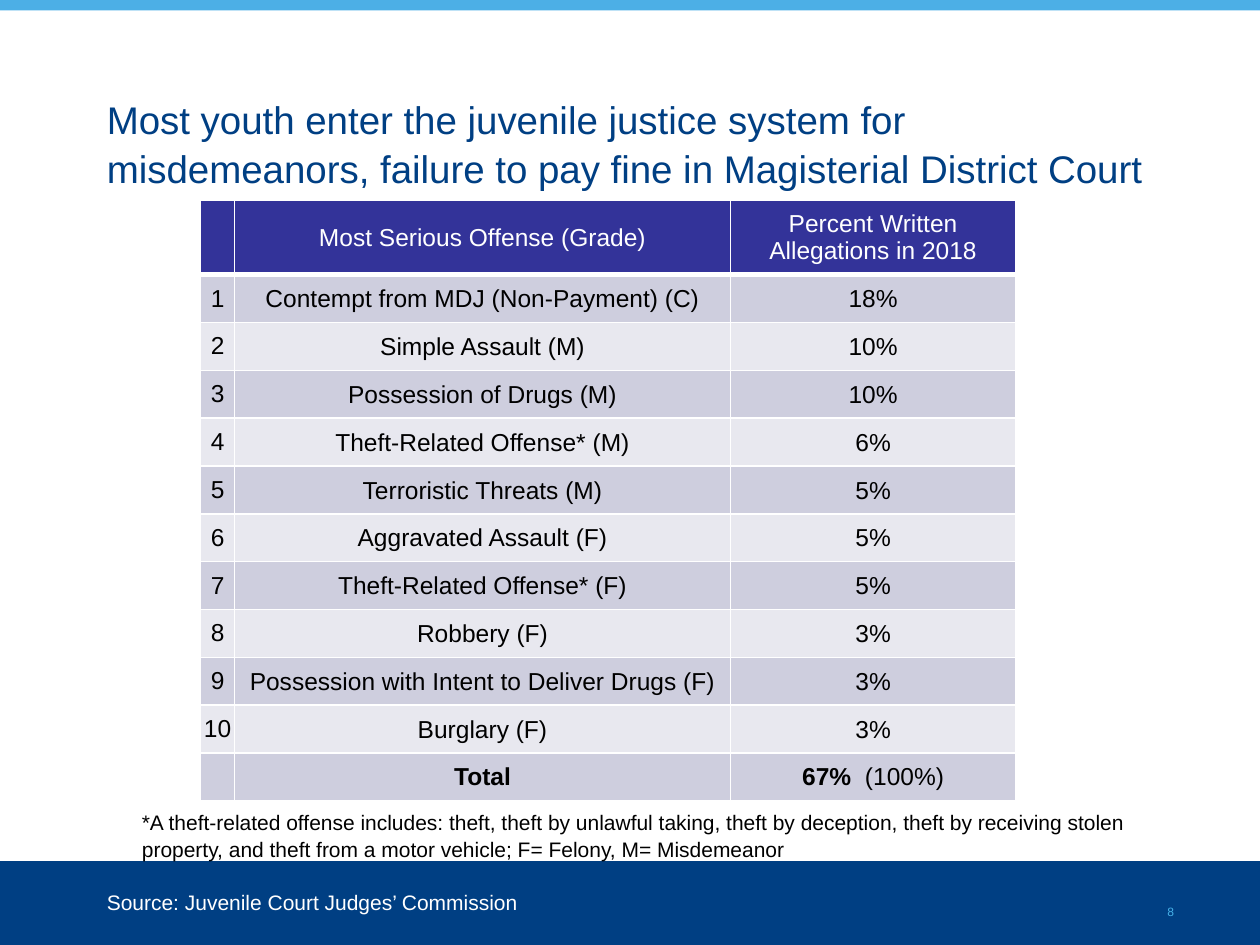
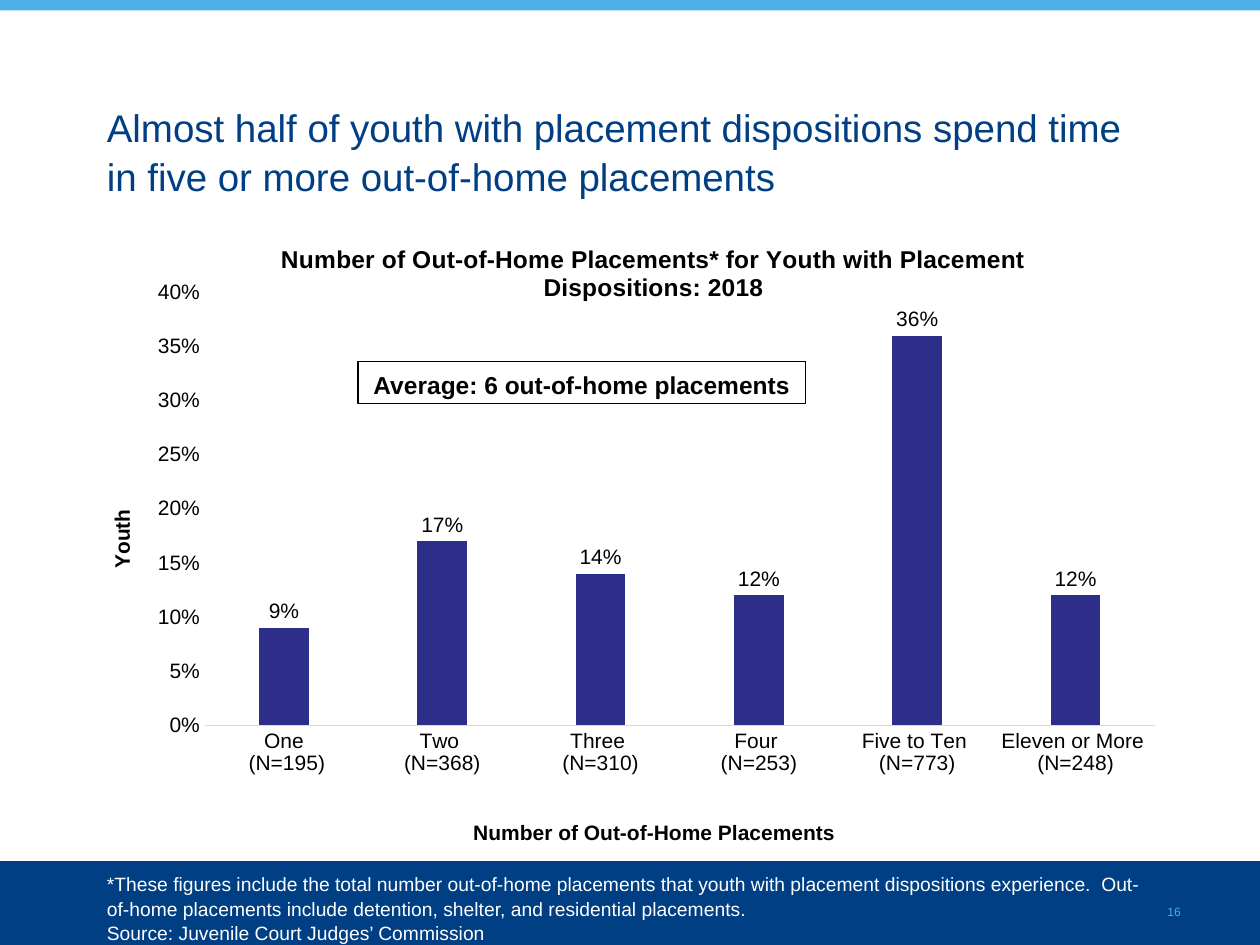
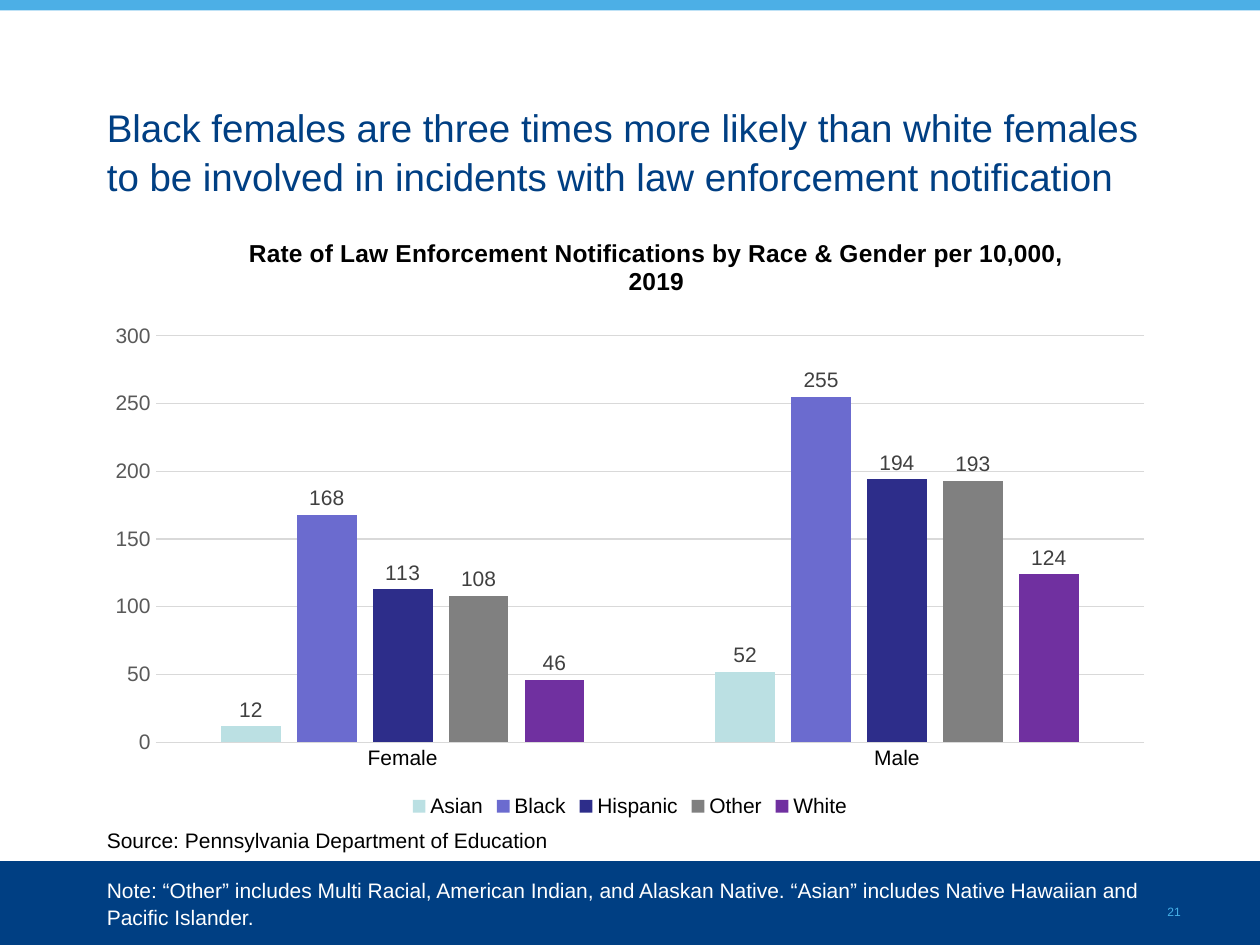
from lxml import etree
from pptx import Presentation
from pptx.chart.data import CategoryChartData
from pptx.dml.color import RGBColor
from pptx.enum.chart import XL_CHART_TYPE, XL_LABEL_POSITION, XL_LEGEND_POSITION, XL_TICK_MARK
from pptx.enum.shapes import MSO_SHAPE
from pptx.enum.text import MSO_ANCHOR, PP_ALIGN
from pptx.oxml.ns import qn
from pptx.util import Pt

COLUMN = XL_CHART_TYPE.COLUMN_CLUSTERED
LABEL_ABOVE = XL_LABEL_POSITION.OUTSIDE_END
LEGEND_BOTTOM = XL_LEGEND_POSITION.BOTTOM
NO_TICK = XL_TICK_MARK.NONE
RECTANGLE = MSO_SHAPE.RECTANGLE
TOP, MIDDLE = MSO_ANCHOR.TOP, MSO_ANCHOR.MIDDLE
LEFT, CENTER = PP_ALIGN.LEFT, PP_ALIGN.CENTER

NAVY = RGBColor(0x00, 0x3F, 0x83)
SKY = RGBColor(0x4C, 0xAF, 0xE6)
NUMBER_BLUE = RGBColor(0x46, 0xB0, 0xE7)
WHITE = RGBColor(0xFF, 0xFF, 0xFF)
BLACK = RGBColor(0x00, 0x00, 0x00)
HEADER_BLUE = RGBColor(0x33, 0x33, 0x99)
ROW_DARK = RGBColor(0xCE, 0xCE, 0xDE)
ROW_LIGHT = RGBColor(0xE8, 0xE8, 0xEF)
RULE_GREY = RGBColor(0xD9, 0xD9, 0xD9)
AXIS_GREY = RGBColor(0x59, 0x59, 0x59)
LABEL_GREY = RGBColor(0x40, 0x40, 0x40)
INDIGO = RGBColor(0x2D, 0x2D, 0x8A)
AQUA = RGBColor(0xBB, 0xE0, 0xE3)
PERIWINKLE = RGBColor(0x6B, 0x6B, 0xCF)
GREY = RGBColor(0x80, 0x80, 0x80)
PURPLE = RGBColor(0x70, 0x30, 0xA0)

FONT = "Arial"
SLIDE_WIDTH, SLIDE_HEIGHT = 720, 540
MARGIN = 54
CONTENT_WIDTH = SLIDE_WIDTH - 2 * MARGIN
FOOTER_TOP = 492

OFFENSES = [
    ("Contempt from MDJ (Non-Payment) (C)", "18%"),
    ("Simple Assault (M)", "10%"),
    ("Possession of Drugs (M)", "10%"),
    ("Theft-Related Offense* (M)", "6%"),
    ("Terroristic Threats (M)", "5%"),
    ("Aggravated Assault (F)", "5%"),
    ("Theft-Related Offense* (F)", "5%"),
    ("Robbery (F)", "3%"),
    ("Possession with Intent to Deliver Drugs (F)", "3%"),
    ("Burglary (F)", "3%"),
]
PLACEMENTS = {
    "One\n (N=195)": 0.09,
    "Two \n(N=368)": 0.17,
    "Three \n(N=310)": 0.14,
    "Four \n(N=253)": 0.12,
    "Five to Ten \n(N=773)": 0.36,
    "Eleven or More \n(N=248)": 0.12,
}
NOTIFICATION_RATES = [
    ("Asian", (12, 52), AQUA),
    ("Black", (168, 255), PERIWINKLE),
    ("Hispanic", (113, 194), INDIGO),
    ("Other", (108, 193), GREY),
    ("White", (46, 124), PURPLE),
]


def points(*lengths):
    return [Pt(length) for length in lengths]


def set_font(font, size, color=BLACK, bold=False):
    font.name, font.size, font.bold = FONT, Pt(size), bold
    font.color.rgb = color


def add_run(paragraph, text, size=12, color=BLACK, bold=False):
    run = paragraph.add_run()
    run.text = text
    set_font(run.font, size, color, bold)
    return run


def write_text(frame, text, align=LEFT, line_spacing=1.07, **font):
    """Fill a text frame, one paragraph for each line of text."""
    for index, line in enumerate(text.split("\n")):
        paragraph = frame.add_paragraph() if index else frame.paragraphs[0]
        paragraph.alignment, paragraph.line_spacing = align, line_spacing
        add_run(paragraph, line, **font)


def add_text(slide, box, text, anchor=TOP, wrap=True, **text_format):
    shape = slide.shapes.add_textbox(*points(*box))
    shape.text_frame.word_wrap = wrap
    shape.text_frame.vertical_anchor = anchor
    write_text(shape.text_frame, text, **text_format)
    return shape


def add_rectangle(slide, box, fill=None, line=None):
    shape = slide.shapes.add_shape(RECTANGLE, *points(*box))
    shape.shadow.inherit = False
    if fill is None:
        shape.fill.background()
    else:
        shape.fill.solid()
        shape.fill.fore_color.rgb = fill
    if line is None:
        shape.line.fill.background()
    else:
        shape.line.color.rgb = line
        shape.line.width = Pt(0.75)
    return shape


def add_base_slide(presentation, title, number, title_box=(MARGIN, 54, CONTENT_WIDTH, 42), anchor=TOP):
    slide = presentation.slides.add_slide(presentation.slide_layouts[6])
    add_rectangle(slide, (0, FOOTER_TOP, SLIDE_WIDTH, SLIDE_HEIGHT - FOOTER_TOP), NAVY)
    add_rectangle(slide, (0, 0, SLIDE_WIDTH, 6), SKY)
    number_box = add_text(slide, (660, 504, 24.5, 16.5), str(number), wrap=False, color=NUMBER_BLUE)
    number_run = number_box.text_frame.paragraphs[0].runs[0]
    number_run.font._element.set("baseline", "-25000")
    add_text(slide, title_box, title, anchor=anchor, size=22, color=NAVY)
    return slide


def set_borders(cell, bottom=1):
    properties = cell._tc.get_or_add_tcPr()
    for side, width in (("L", 1), ("R", 1), ("T", 1), ("B", bottom)):
        line = etree.SubElement(properties, qn(f"a:ln{side}"), w=str(Pt(width)))
        fill = etree.SubElement(line, qn("a:solidFill"))
        etree.SubElement(fill, qn("a:srgbClr"), val=str(WHITE))


def fill_cell(cell, text, fill, bottom=1, inset=0, **font):
    set_borders(cell, bottom)
    cell.fill.solid()
    cell.fill.fore_color.rgb = fill
    cell.vertical_anchor = MIDDLE
    cell.margin_left = cell.margin_right = cell.margin_top = Pt(inset)
    cell.margin_bottom = 0
    if text:
        write_text(cell.text_frame, text, align=CENTER, line_spacing=1, size=14, **font)


def add_offense_table(slide, left, top):
    column_widths = (19.3, 283.6, 162.8)
    header_height, row_height = 42.3, 27.35
    row_count = len(OFFENSES) + 2
    height = header_height + row_height * (row_count - 1)
    table = slide.shapes.add_table(
        row_count, len(column_widths), *points(left, top, sum(column_widths), height)).table
    for column, width in zip(table.columns, column_widths):
        column.width = Pt(width)
    for index, row in enumerate(table.rows):
        row.height = Pt(row_height if index else header_height)

    headings = ("", "Most Serious Offense (Grade)", "Percent Written Allegations in 2018")
    for column, heading in enumerate(headings):
        fill_cell(table.cell(0, column), heading, HEADER_BLUE, bottom=3, color=WHITE)
    for rank, offense in enumerate(OFFENSES, 1):
        fill = ROW_DARK if rank % 2 else ROW_LIGHT
        for column, text in enumerate((str(rank), *offense)):
            fill_cell(table.cell(rank, column), text, fill, inset=0.7 if column else 0)
    total_row = row_count - 1
    for column, text in enumerate(("", "Total", "67%  ")):
        fill_cell(table.cell(total_row, column), text, ROW_DARK, bold=True)
    add_run(table.cell(total_row, 2).text_frame.paragraphs[0], "(100%)", size=14)


def set_layout(parent, x, y, width=None, height=None):
    """Place a chart part by fractions of the chart; with a size, the inner plot."""
    layout = parent.find(qn("c:layout"))
    if layout is None:
        layout = etree.Element(qn("c:layout"))
        parent.insert(0 if parent.find(qn("c:tx")) is None else 1, layout)
    manual = etree.SubElement(layout, qn("c:manualLayout"))
    settings = [("xMode", "edge"), ("yMode", "edge"), ("x", x), ("y", y)]
    if width is not None:
        settings.insert(0, ("layoutTarget", "inner"))
        settings += [("w", width), ("h", height)]
    for name, value in settings:
        etree.SubElement(manual, qn(f"c:{name}"), val=str(value))


def write_chart_title(title, text, size, position):
    paragraph = title.text_frame.paragraphs[0]
    set_font(paragraph.font, size, bold=True)
    add_run(paragraph, text, size=size, bold=True)
    set_layout(title._element, *position)


def format_axis(axis, color=BLACK):
    axis.major_tick_mark = axis.minor_tick_mark = NO_TICK
    set_font(axis.tick_labels.font, 12, color)


def add_column_chart(slide, box, categories, series_list, title, title_position, plot_box,
                     number_format, maximum, step, axis_color=BLACK, label_color=BLACK):
    data = CategoryChartData(number_format=number_format)
    data.categories = categories
    for name, values, _ in series_list:
        data.add_series(name, values)
    chart = slide.shapes.add_chart(COLUMN, *points(*box), data).chart
    set_font(chart.font, 12)
    chart.has_legend = False
    chart.has_title = True
    write_chart_title(chart.chart_title, title, 14, title_position)
    set_layout(chart._chartSpace.chart.plotArea, *plot_box)

    format_axis(chart.category_axis)
    chart.category_axis.format.line.color.rgb = RULE_GREY
    chart.category_axis.format.line.width = Pt(0.75)
    value_axis = chart.value_axis
    format_axis(value_axis, axis_color)
    value_axis.format.line.fill.background()
    value_axis.has_major_gridlines = False
    value_axis.minimum_scale, value_axis.maximum_scale, value_axis.major_unit = 0, maximum, step
    value_axis.tick_labels.number_format = number_format
    value_axis.tick_labels.number_format_is_linked = False

    plot = chart.plots[0]
    plot.gap_width, plot.overlap, plot.vary_by_categories = 219, -27, False
    for series, (_, _, color) in zip(plot.series, series_list):
        series.format.fill.solid()
        series.format.fill.fore_color.rgb = color
        labels = series.data_labels
        labels.show_value = True
        labels.position = LABEL_ABOVE
        labels.number_format, labels.number_format_is_linked = number_format, False
        set_font(labels.font, 12, label_color)
    return chart


def build_offense_slide(presentation):
    slide = add_base_slide(
        presentation,
        "Most youth enter the juvenile justice system for misdemeanors, "
        "failure to pay fine in Magisterial District Court",
        8, title_box=(MARGIN, 60, 621, 42), anchor=MIDDLE)
    add_text(slide, (74, 458, 581, 36),
             "*A theft-related offense includes: theft, theft by unlawful taking, theft by deception, "
             "theft by receiving stolen property, and theft from a motor vehicle; "
             "F= Felony, M= Misdemeanor")
    add_offense_table(slide, 114.7, 114.7)
    add_text(slide, (MARGIN, 504, CONTENT_WIDTH, 22),
             "Source: Juvenile Court Judges’ Commission", color=WHITE)


def build_placement_slide(presentation):
    slide = add_base_slide(
        presentation,
        "Almost half of youth with placement dispositions spend time "
        "in five or more out-of-home placements", 16)
    add_text(slide, (MARGIN, 494, CONTENT_WIDTH, 47.5),
             "*These figures include the total number out-of-home placements that youth with "
             "placement dispositions experience.  Out-of-home placements include detention, "
             "shelter, and residential placements.\n"
             "Source: Juvenile Court Judges’ Commission", size=11, color=WHITE)
    chart = add_column_chart(
        slide, (MARGIN, 129.6, CONTENT_WIDTH, 356.4), list(PLACEMENTS),
        [("Series 1", list(PLACEMENTS.values()), INDIGO)],
        "Number of Out-of-Home Placements* for Youth with Placement Dispositions: 2018",
        (0.17, 0.02), (0.103, 0.106, 0.887, 0.698), "0%", maximum=0.4, step=0.05)
    write_chart_title(chart.category_axis.axis_title, "Number of Out-of-Home Placements", 12, (0.35, 0.95))
    write_chart_title(chart.value_axis.axis_title, "Youth", 12, (0.01, 0.45))
    average = add_rectangle(slide, (204.6, 206.6, 255.8, 24), line=BLACK)
    average.text_frame.word_wrap = True
    average.text_frame.vertical_anchor = TOP
    write_text(average.text_frame, "Average: 6 out-of-home placements",
               align=CENTER, size=14, bold=True)


def build_notification_slide(presentation):
    slide = add_base_slide(
        presentation,
        "Black females are three times more likely than white females "
        "to be involved in incidents with law enforcement notification", 21)
    add_text(slide, (MARGIN, 497, CONTENT_WIDTH, 36),
             "Note: “Other” includes Multi Racial, American Indian, and Alaskan Native. "
             "“Asian” includes Native Hawaiian and Pacific Islander.", color=WHITE)
    chart = add_column_chart(
        slide, (MARGIN, 128, CONTENT_WIDTH, 342), ["Female", "Male"], NOTIFICATION_RATES,
        "Rate of Law Enforcement Notifications by Race & Gender per 10,000, 2019",
        (0.14, 0.015), (0.057, 0.187, 0.923, 0.679), "0", maximum=300, step=50,
        axis_color=AXIS_GREY, label_color=LABEL_GREY)
    chart.value_axis.has_major_gridlines = True
    gridline = chart.value_axis.major_gridlines.format.line
    gridline.color.rgb, gridline.width = RULE_GREY, Pt(0.75)
    chart.has_legend = True
    chart.legend.position = LEGEND_BOTTOM
    chart.legend.include_in_layout = False
    set_font(chart.legend.font, 12)
    add_text(slide, (MARGIN, 468.5, CONTENT_WIDTH, 22),
             "Source: Pennsylvania Department of Education")


def main():
    presentation = Presentation()
    presentation.slide_width, presentation.slide_height = points(SLIDE_WIDTH, SLIDE_HEIGHT)
    build_offense_slide(presentation)
    build_placement_slide(presentation)
    build_notification_slide(presentation)
    presentation.save("out.pptx")


if __name__ == "__main__":
    main()
